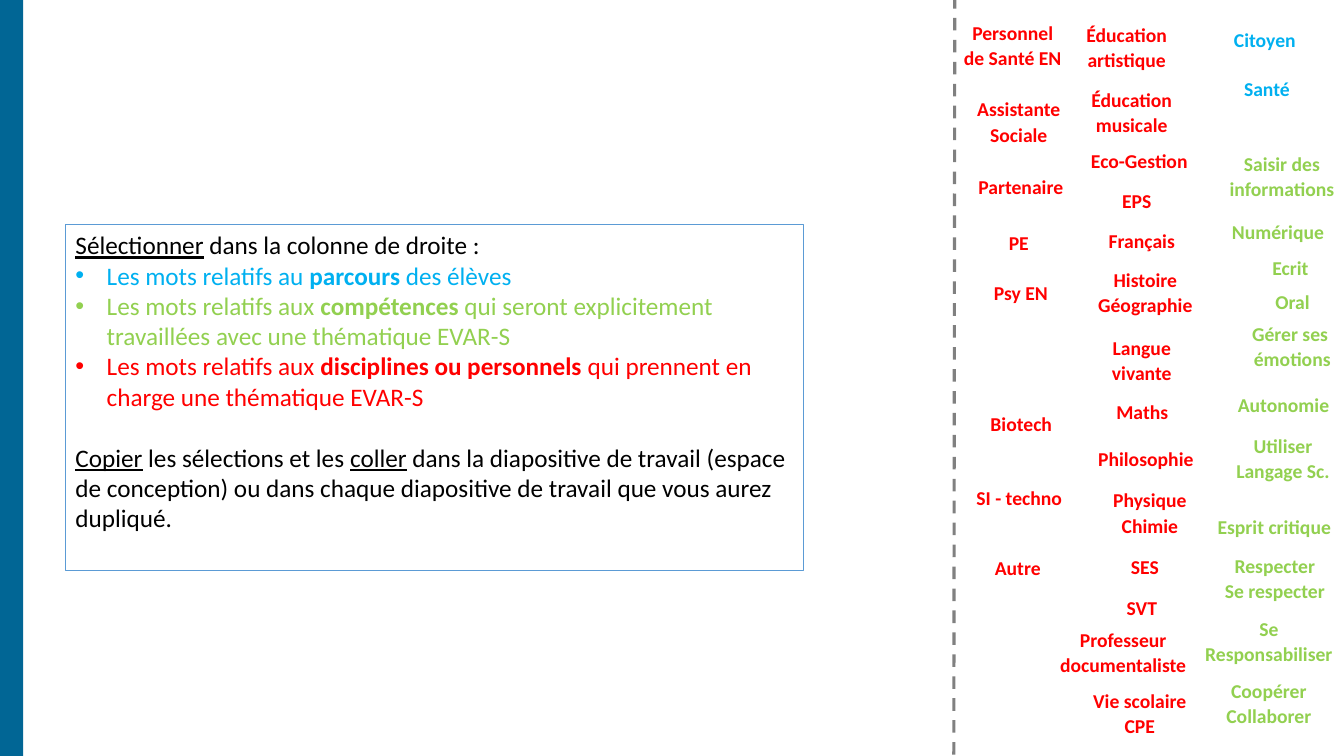
from lxml import etree
from pptx import Presentation
from pptx import util as u
from pptx.dml.color import RGBColor
from pptx.enum import dml, shapes, text
from pptx.oxml import ns

BLUE = RGBColor(0x00, 0xB0, 0xF0)
GREEN = RGBColor(0x92, 0xD0, 0x50)
RED = RGBColor(0xFF, 0x00, 0x00)
BLACK = RGBColor(0x00, 0x00, 0x00)
WHITE = RGBColor(0xFF, 0xFF, 0xFF)
GREY = RGBColor(0x80, 0x80, 0x80)
FRAME = RGBColor(0x5B, 0x9B, 0xD5)
BAND = RGBColor(0x01, 0x66, 0x95)
LEFT, CENTER = text.PP_ALIGN.LEFT, text.PP_ALIGN.CENTER

pathways = [
    ("Citoyen", 12.14, 0.23, 1, 0.34),
    ("Santé", 12.24, 0.71, 0.8, 0.34),
]
short_skills = [
    ("Numérique", 12.12, 2.12, 1.23, 0.48),
    ("Ecrit", 12.52, 2.47, 0.61, 0.48),
    ("Oral", 12.55, 2.81, 0.59, 0.48),
]
skills = [
    ("Saisir des\ninformations", 12.03, 1.44, 1.37, 0.67),
    ("Gérer ses\n émotions", 12.24, 3.13, 1.11, 0.62),
    ("Autonomie", 12.12, 3.83, 1.22, 0.43),
    ("Utiliser\nLangage Sc.", 12.1, 4.24, 1.25, 0.65),
    ("Esprit critique", 11.91, 5.04, 1.46, 0.39),
    ("Respecter\nSe respecter", 11.98, 5.43, 1.33, 0.88),
    ("Se\nResponsabiliser", 11.78, 6.05, 1.61, 0.65),
    ("Coopérer\nCollaborer", 12.01, 6.67, 1.15, 0.63),
]
subjects = [
    ("Éducation artistique", 10.56, 0.16, 1.23, 0.56),
    ("Éducation musicale", 10.61, 0.81, 1.23, 0.56),
    ("Eco-Gestion", 10.57, 1.41, 1.46, 0.3),
    ("EPS", 10.66, 1.81, 1.23, 0.34),
    ("Français", 10.71, 2.21, 1.23, 0.43),
    ("Histoire Géographie", 10.63, 2.59, 1.46, 0.48),
    ("Langue vivante", 10.71, 3.27, 1.23, 0.38),
    ("Maths", 10.6, 3.9, 1.46, 0.42),
    ("Philosophie", 10.75, 4.37, 1.23, 0.37),
    ("Physique\nChimie", 10.79, 4.78, 1.23, 0.64),
    ("SES", 10.74, 5.44, 1.23, 0.34),
    ("SVT", 10.71, 5.85, 1.23, 0.38),
    ("Professeur documentaliste", 10.37, 6.16, 1.54, 0.51),
    ("Vie scolaire\nCPE", 10.69, 6.77, 1.23, 0.61),
]
staff = [
    ("Personnel de Santé EN", 9.43, 0.14, 1.23, 0.67),
    ("Assistante Sociale", 9.49, 0.9, 1.23, 0.51),
    ("Partenaire", 9.51, 1.67, 1.23, 0.42),
    ("PE", 9.49, 2.23, 1.23, 0.33),
    ("Psy EN", 9.51, 2.72, 1.23, 0.33),
    ("Biotech", 9.4, 4.02, 1.46, 0.3),
    ("SI - techno", 9.38, 4.76, 1.46, 0.3),
    ("Autre", 9.48, 5.45, 1.23, 0.33),
]
word_groups = [
    (pathways, BLUE, LEFT, 1.0, True),
    (short_skills, GREEN, LEFT, 1.07, False),
    (skills, GREEN, CENTER, 1.07, False),
    (subjects + staff, RED, CENTER, 1.07, True),
]
instructions = [
    (BLACK, False, [("Sélectionner", "u"), (" dans la colonne de droite :", "")]),
    (BLUE, True, [("Les mots relatifs au ", ""), ("parcours", "b"), (" des élèves", "")]),
    (GREEN, True, [("Les mots relatifs aux ", ""), ("compétences", "b"),
                   (" qui seront explicitement travaillées avec une thématique EVAR-S", "")]),
    (RED, True, [("Les mots relatifs aux ", ""), ("disciplines ou personnels ", "b"),
                 ("qui prennent en charge une thématique EVAR-S", "")]),
    (BLACK, False, [("Copier", "u"), (" les sélections et les ", ""), ("coller", "u"),
                    (" dans la diapositive de travail (espace de conception) ou dans chaque "
                     "diapositive de travail que vous aurez dupliqué.", "")]),
]


def add_rectangle(left, top, width, height, fill):
    box = page.shapes.add_shape(shapes.MSO_SHAPE.RECTANGLE, u.Inches(left), u.Inches(top),
                                u.Inches(width), u.Inches(height))
    box.shadow.inherit = False
    box.fill.solid()
    box.fill.fore_color.rgb = fill
    box.line.fill.background()
    return box


def style_paragraph(para, size, colour, align):
    para.alignment = align
    para.font.name = "Calibri"
    para.font.size = u.Pt(size)
    para.font.color.rgb = colour


deck = Presentation()
deck.slide_width, deck.slide_height = u.Inches(13.33), u.Inches(7.5)
page = deck.slides.add_slide(deck.slide_layouts[6])

add_rectangle(0, 0, 0.23, 7.5, BAND)

divider = page.shapes.add_connector(shapes.MSO_CONNECTOR.STRAIGHT, u.Inches(9.47), u.Inches(-0.04),
                                    u.Inches(9.46), u.Inches(7.62))
divider.line.color.rgb = GREY
divider.line.width = u.Pt(2.25)
divider.line.dash_style = dml.MSO_LINE.DASH
etree.SubElement(divider._element.spPr, ns.qn("a:effectLst"))

for words, colour, align, spacing, wrap in word_groups:
    for label, left, top, width, height in words:
        box = page.shapes.add_textbox(u.Inches(left), u.Inches(top), u.Inches(width), u.Inches(height))
        box.text_frame.word_wrap = wrap
        box.text_frame.text = label
        for para in box.text_frame.paragraphs:
            style_paragraph(para, 14, colour, align)
            para.font.bold = True
            para.line_spacing = spacing

guide = add_rectangle(0.65, 2.23, 7.32, 3.43, WHITE)
guide.line.color.rgb = FRAME
guide.line.width = u.Pt(1)
frame = guide.text_frame
frame.word_wrap = True
frame.vertical_anchor = text.MSO_ANCHOR.TOP
for index, (colour, bulleted, spans) in enumerate(instructions):
    para = frame.add_paragraph() if index else frame.paragraphs[0]
    style_paragraph(para, 18, colour, LEFT)
    for words, style in spans:
        span = para.add_run()
        span.text = words
        span.font.bold = style == "b"
        span.font.underline = style == "u"
    if bulleted:
        props = para._p.get_or_add_pPr()
        props.set("marL", str(u.Inches(0.31)))
        props.set("indent", str(u.Inches(-0.31)))
        bullet = etree.Element(ns.qn("a:buChar"), char="•")
        props.insert(0, bullet)
        bullet.addprevious(etree.Element(ns.qn("a:buFont"), typeface="Arial"))
frame.paragraphs[-1].space_before = u.Pt(22)

deck.save("out.pptx")
